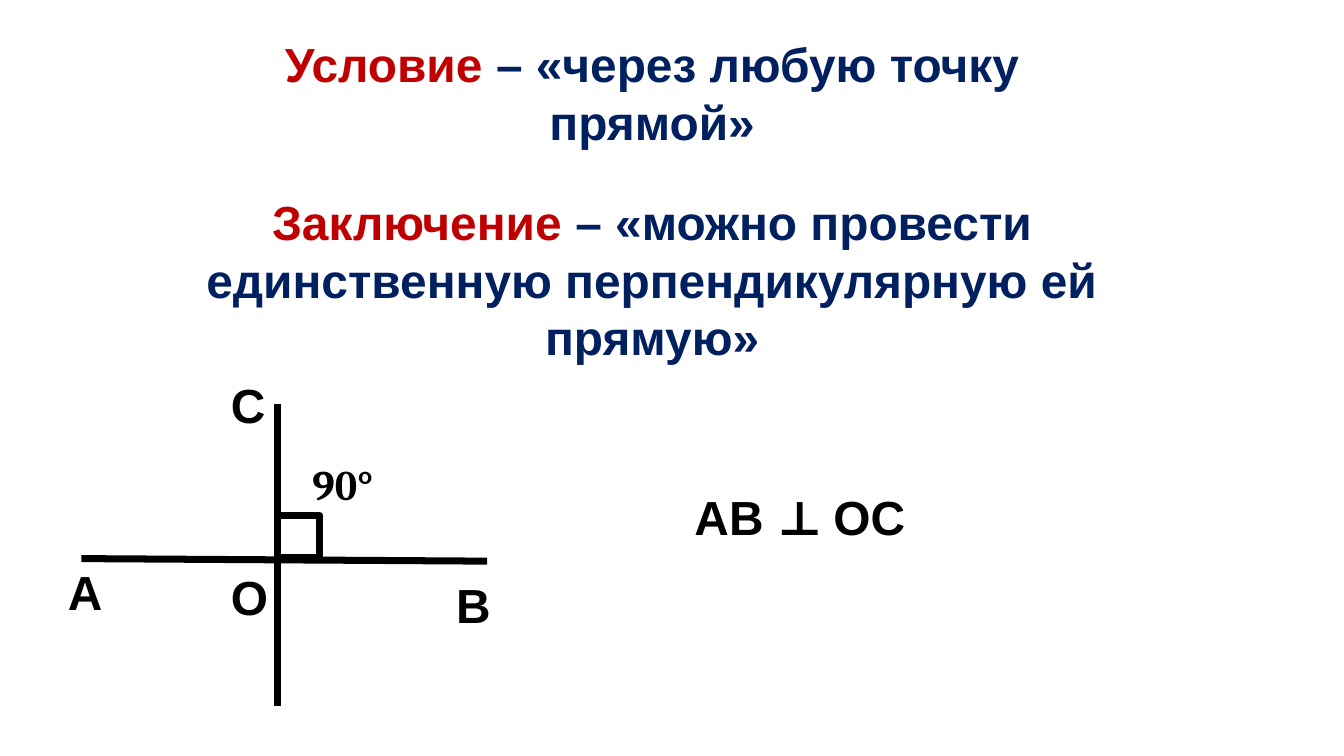
from pptx import Presentation
from pptx.dml.color import RGBColor
from pptx.enum.shapes import MSO_CONNECTOR, MSO_SHAPE
from pptx.enum.text import MSO_AUTO_SIZE, PP_ALIGN
from pptx.oxml.ns import qn
from pptx.util import Pt
from lxml.etree import SubElement

THEME = {
    "black": RGBColor(0, 0, 0), "white": RGBColor(255, 255, 255),
    "red": RGBColor(0xC0, 0, 0), "navy": RGBColor(0, 0x20, 0x60),
    "sans": "Arial", "serif": "Cambria",
    "body": 41, "angle": 36, "stroke": 6,
}

# (left, top, width, height), runs of (text, colour, font)
STATEMENTS = [
    ((209.5, 26.6, 699.1, 106.6),
     [("Условие ", "red", "sans"),
      ("– «через любую точку прямой»", "navy", "sans")]),
    ((149.8, 162, 818.6, 156.2),
     [("Заключение ", "red", "sans"),
      ("– «можно провести единственную перпендикулярную ей прямую»", "navy", "sans")]),
]
RELATION = ((588.2, 414.7, 221.8, 56.9),
            [("AB ", "black", "sans"), ("⊥ ", "black", "serif"), ("OC", "black", "sans")])
ANGLE = ((257.8, 388.1, 164.9, 54), [("90°", "black", "serif")])
POINTS = {"C": (190.8, 318.2), "O": (190.8, 483.1),
          "A": (51.1, 478.8), "B": (383.8, 490.3)}
POINT_SIZE = (45, 56.9)

AXIS_X = 238.3
LINES = [((AXIS_X, 346.3), (AXIS_X, 604.8)), ((69.8, 478.8), (417.6, 481))]
CORNER = (AXIS_X, 442.1, 36, 36)


def pts(values):
    return [Pt(v) for v in values]


def set_all(obj, values):
    for name, value in values.items():
        setattr(obj, name, value)


def stroke(line):
    line.color.rgb = THEME["black"]
    line.width = Pt(THEME["stroke"])


def add_text(s, box, runs, size="body", align=PP_ALIGN.LEFT, wrap=True, inset=(7.2, 3.6)):
    tf = s.shapes.add_textbox(*pts(box)).text_frame
    x, y = pts(inset)
    set_all(tf, {"word_wrap": wrap, "auto_size": MSO_AUTO_SIZE.SHAPE_TO_FIT_TEXT,
                 "margin_left": x, "margin_right": x, "margin_top": y, "margin_bottom": y})
    p = tf.paragraphs[0]
    p.alignment = align
    for text, color, font in runs:
        r = p.add_run()
        r.text = text
        set_all(r.font, {"name": THEME[font], "size": Pt(THEME[size]), "bold": True})
        r.font.color.rgb = THEME[color]


def add_figure(s):
    """Draw the two crossing lines and the right-angle mark."""
    for start, end in LINES:
        line = s.shapes.add_connector(MSO_CONNECTOR.STRAIGHT, *pts(start + end))
        stroke(line.line)
        SubElement(line._element.spPr, qn("a:effectLst"))
    sp = s.shapes.add_shape(MSO_SHAPE.RECTANGLE, *pts(CORNER))
    sp.shadow.inherit = False
    sp.fill.solid()
    sp.fill.fore_color.rgb = THEME["white"]
    stroke(sp.line)


def main():
    prs = Presentation()
    set_all(prs, {"slide_width": Pt(1152), "slide_height": Pt(648)})
    s = prs.slides.add_slide(prs.slide_layouts[6])
    add_figure(s)
    add_text(s, *ANGLE, size="angle", inset=(10, 5))
    for name, corner in POINTS.items():
        add_text(s, corner + POINT_SIZE, [(name, "black", "sans")], wrap=False)
    for box, runs in STATEMENTS:
        add_text(s, box, runs, align=PP_ALIGN.CENTER)
    add_text(s, *RELATION)
    prs.save("out.pptx")


if __name__ == "__main__":
    main()
